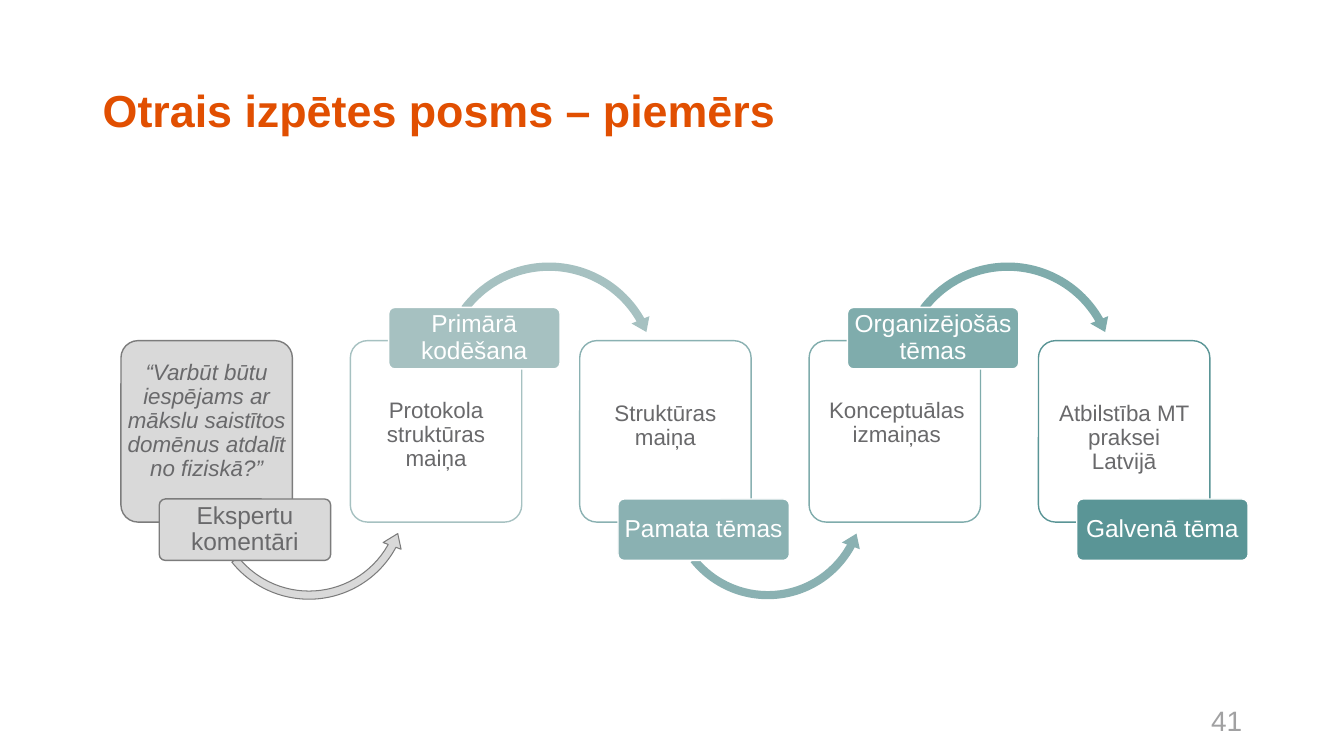
from dataclasses import dataclass
from typing import Optional

import pptx
import pptx.dml.color
import pptx.enum.shapes
import pptx.enum.text
import pptx.oxml
import pptx.oxml.ns
import pptx.util

Inches = pptx.util.Inches
Shape = pptx.enum.shapes.MSO_SHAPE
Align = pptx.enum.text.PP_ALIGN
Anchor = pptx.enum.text.MSO_ANCHOR


@dataclass(frozen=True)
class Theme:
    font: str = "Arial"
    orange: str = "E14F01"
    gray: str = "D9D9D9"
    outline: str = "7C7C7C"
    text: str = "69696B"
    number: str = "A1A1A2"
    white: str = "FFFFFF"
    title_size: float = 32
    number_size: float = 20
    label_size: float = 17.5
    card_size: float = 16


@dataclass(frozen=True)
class Frame:
    left: float
    top: float
    width: float
    height: float


@dataclass(frozen=True)
class Insets:
    left: float
    top: float
    right: float
    bottom: float


@dataclass(frozen=True)
class Style:
    size: float
    color: str
    bold: Optional[bool] = None
    italic: Optional[bool] = None
    align: Align = Align.CENTER
    anchor: Anchor = Anchor.MIDDLE
    line_spacing: Optional[float] = 0.9


@dataclass(frozen=True)
class Stage:
    body: str
    label: str
    color: str
    insets: Insets
    label_above: bool = False
    quoted: bool = False
    opacity: int = 100
    arrow: bool = True


THEME = Theme()
DEFAULT_INSETS = Insets(0.1, 0.05, 0.1, 0.05)
LABEL_INSETS = Insets(0.03, 0.02, 0.03, 0.02)
LOWER_TEXT = Insets(0.12, 0.56, 0.12, 0.13)
FIRST_LEFT = 1.2
PITCH = (10.3 - FIRST_LEFT) / 4
UPWARD_ARROW = (0.039, 4.921, 17.208, 84.776, 0.046)
DOWNWARD_ARROW = (0.036, 4.428, 198.198, 130.136, 0.042)

STAGES = (
    Stage("“Varbūt būtu iespējams ar mākslu saistītos domēnus atdalīt no fiziskā?”",
          "Ekspertu komentāri", THEME.gray, Insets(0, 0.15, 0, 0.4), quoted=True),
    Stage("Protokola struktūras maiņa", "Primārā kodēšana", "A6C1C1",
          Insets(0.12, 0.53, 0.12, 0.13), label_above=True, opacity=90),
    Stage("Struktūras maiņa", "Pamata tēmas", "8AB1B2", LOWER_TEXT, opacity=90),
    Stage("Konceptuālas izmaiņas", "Organizējošās tēmas", "7FACAC",
          Insets(0.12, 0.53, 0.08, 0.13), label_above=True),
    Stage("Atbilstība MT praksei Latvijā", "Galvenā tēma", "5A9596", LOWER_TEXT,
          opacity=90, arrow=False),
)


def rgb(color: str) -> pptx.dml.color.RGBColor:
    return pptx.dml.color.RGBColor.from_string(color)


def place(frame: Frame) -> tuple:
    return tuple(Inches(n) for n in (frame.left, frame.top, frame.width, frame.height))


def write(box, text: str, style: Style, insets: Insets = DEFAULT_INSETS) -> None:
    frame = box.text_frame
    frame.word_wrap = True
    frame.vertical_anchor = style.anchor
    frame.margin_left, frame.margin_top = Inches(insets.left), Inches(insets.top)
    frame.margin_right, frame.margin_bottom = Inches(insets.right), Inches(insets.bottom)
    para = frame.paragraphs[0]
    para.alignment = style.align
    para.line_spacing = style.line_spacing
    span = para.add_run()
    span.text = text
    span.font.name = THEME.font
    span.font.size = pptx.util.Pt(style.size)
    span.font.bold = style.bold
    span.font.italic = style.italic
    span.font.color.rgb = rgb(style.color)


def add_text(page, frame: Frame, text: str, style: Style) -> None:
    write(page.shapes.add_textbox(*place(frame)), text, style)


def add_figure(page, kind: Shape, frame: Frame, adjustments: tuple, fill: str,
               line: Optional[str], width: float = 1, opacity: int = 100):
    figure = page.shapes.add_shape(kind, *place(frame))
    figure.shadow.inherit = False
    for index, value in enumerate(adjustments):
        figure.adjustments[index] = value
    figure.fill.solid()
    figure.fill.fore_color.rgb = rgb(fill)
    if opacity < 100:
        paint = figure.fill._xPr.find(pptx.oxml.ns.qn("a:solidFill"))[0]
        alpha = pptx.oxml.parse_xml(
            f'<a:alpha {pptx.oxml.ns.nsdecls("a")} val="{opacity * 1000}"/>')
        paint.append(alpha)
    if line is None:
        figure.line.fill.background()
    else:
        figure.line.color.rgb = rgb(line)
        figure.line.width = pptx.util.Pt(width)
    return figure


def add_stage(page, stage: Stage, left: float) -> None:
    card = add_figure(page, Shape.ROUNDED_RECTANGLE, Frame(left, 3.38, 1.7, 1.8), (0.1,),
                      stage.color if stage.quoted else THEME.white,
                      THEME.outline if stage.quoted else stage.color,
                      opacity=stage.opacity)
    write(card, stage.body, Style(THEME.card_size, THEME.text, italic=stage.quoted or None,
                                  anchor=Anchor.TOP), stage.insets)
    if stage.arrow:
        if stage.label_above:
            kind, top, size, bend = Shape.CIRCULAR_ARROW, 2.55, 2.28, DOWNWARD_ARROW
        else:
            kind, top, size, bend = Shape.LEFT_CIRCULAR_ARROW, 3.93, 2.07, UPWARD_ARROW
        add_figure(page, kind, Frame(left + 0.83, top, size, size), bend, stage.color,
                   THEME.outline if stage.quoted else None, 0.75)
    label = add_figure(page, Shape.ROUNDED_RECTANGLE,
                       Frame(left + 0.38, 3.05 if stage.label_above else 4.95, 1.7, 0.61),
                       (0.1,), stage.color, THEME.outline if stage.quoted else THEME.white)
    write(label, stage.label,
          Style(THEME.label_size, THEME.text if stage.quoted else THEME.white), LABEL_INSETS)


def main() -> None:
    deck = pptx.Presentation()
    deck.slide_width, deck.slide_height = Inches(13.33), Inches(7.5)
    page = deck.slides.add_slide(deck.slide_layouts[6])
    add_text(page, Frame(0.92, 0.4, 11.5, 1.45), "Otrais izpētes posms – piemērs",
             Style(THEME.title_size, THEME.orange, bold=True, align=Align.LEFT))
    add_text(page, Frame(9.42, 6.95, 3, 0.4), "41",
             Style(THEME.number_size, THEME.number, align=Align.RIGHT, line_spacing=None))
    for index, stage in enumerate(STAGES):
        add_stage(page, stage, FIRST_LEFT + index * PITCH)
    deck.save("out.pptx")


if __name__ == "__main__":
    main()
